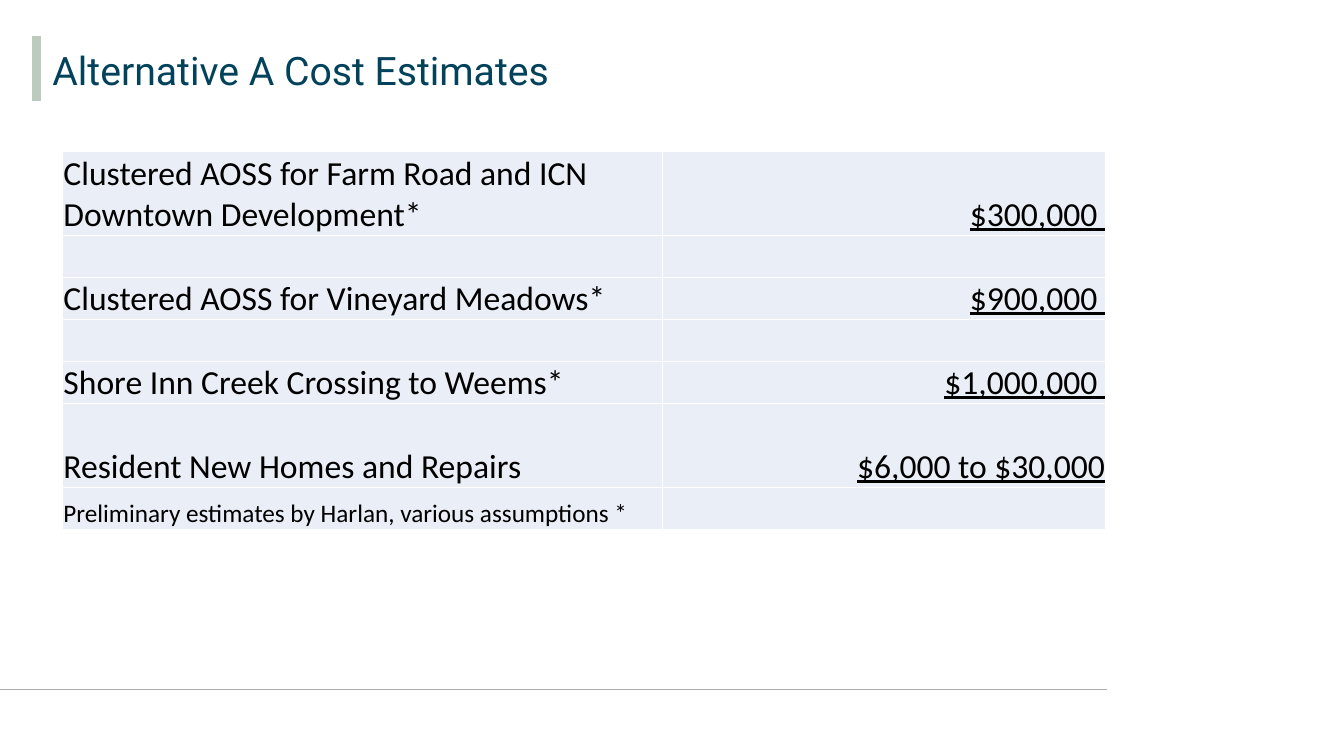
from dataclasses import dataclass

from pptx import Presentation
from pptx.dml.color import RGBColor
from pptx.enum.shapes import MSO_CONNECTOR
from pptx.enum.text import MSO_ANCHOR, MSO_AUTO_SIZE, PP_ALIGN
from pptx.oxml.ns import qn
from pptx.util import Inches, Pt
from lxml.etree import SubElement

SLIDE_WIDTH, SLIDE_HEIGHT = Inches(13.33), Inches(7.5)


@dataclass(frozen=True)
class Theme:
    title_font: str = "Roboto"
    body_font: str = "Calibri"
    title_size: float = 28
    body_size: float = 24
    note_size: float = 18
    border_width: float = 1
    title: str = "03425B"
    text: str = "000000"
    cell: str = "EAEFF7"
    border: str = "FFFFFF"
    accent: str = "BBCBBE"
    rule: str = "AFABAB"


@dataclass(frozen=True)
class Line:
    """A straight line; positions are percentages of the slide."""
    start: tuple[float, float]
    end: tuple[float, float]
    color: str
    weight: float


@dataclass(frozen=True)
class CostRow:
    item: str = ""
    cost: str = ""
    lines: int = 1
    size: float = Theme.body_size


THEME = Theme()
LINES = [
    Line((2.7, 4.8), (2.7, 13.33), THEME.accent, 6.75),
    Line((82.37, 91.2), (0, 91.2), THEME.rule, 1.25),
]
COLUMN_SHARES = [44.64, 33.01]
LINE_SHARE = 5.56
COST_ROWS = [
    CostRow("Clustered AOSS for Farm Road and ICN Downtown Development*", "$300,000 ", lines=2),
    CostRow(),
    CostRow("Clustered AOSS for Vineyard Meadows*", "$900,000 "),
    CostRow(),
    CostRow("Shore Inn Creek Crossing to Weems*", "$1,000,000 "),
    CostRow("Resident New Homes and Repairs", "$6,000 to $30,000", lines=2),
    CostRow("Preliminary estimates by Harlan, various assumptions *", size=THEME.note_size),
]


def across(percent: float) -> int:
    return round(SLIDE_WIDTH * percent / 100)


def down(percent: float) -> int:
    return round(SLIDE_HEIGHT * percent / 100)


def draw_line(page, line: Line) -> None:
    connector = page.shapes.add_connector(
        MSO_CONNECTOR.STRAIGHT,
        across(line.start[0]), down(line.start[1]),
        across(line.end[0]), down(line.end[1]))
    connector.line.color.rgb = RGBColor.from_string(line.color)
    connector.line.width = Pt(line.weight)
    SubElement(connector._element.spPr, qn("a:effectLst"))


def style_text(para, font: str, size: float, color: str) -> None:
    for span in para.runs:
        span.font.name = font
        span.font.size = Pt(size)
        span.font.color.rgb = RGBColor.from_string(color)


def draw_title(page, text: str) -> None:
    box = page.shapes.title
    box.left, box.top = across(3.15), down(2.93)
    box.width, box.height = across(94.75), down(13.47)
    frame = box.text_frame
    frame.text = text
    frame.auto_size = MSO_AUTO_SIZE.NONE
    frame.vertical_anchor = MSO_ANCHOR.MIDDLE
    para = frame.paragraphs[0]
    para.alignment = PP_ALIGN.LEFT
    para.line_spacing = 0.9
    style_text(para, THEME.title_font, THEME.title_size, THEME.title)


def add_borders(cell) -> None:
    properties = cell._tc.get_or_add_tcPr()
    for side in ("lnL", "lnR", "lnT", "lnB"):
        edge = SubElement(properties, qn(f"a:{side}"), w=str(Pt(THEME.border_width)))
        fill = SubElement(edge, qn("a:solidFill"))
        SubElement(fill, qn("a:srgbClr"), val=THEME.border)


def fill_cell(cell, text: str, size: float, is_cost: bool) -> None:
    add_borders(cell)
    cell.fill.solid()
    cell.fill.fore_color.rgb = RGBColor.from_string(THEME.cell)
    cell.margin_left = cell.margin_right = cell.margin_top = Inches(0.01)
    cell.margin_bottom = 0
    cell.vertical_anchor = MSO_ANCHOR.BOTTOM
    if not text:
        return
    cell.text_frame.text = text
    para = cell.text_frame.paragraphs[0]
    para.alignment = PP_ALIGN.RIGHT if is_cost else PP_ALIGN.LEFT
    style_text(para, THEME.body_font, size, THEME.text)
    para.runs[0].font.underline = is_cost


def draw_costs(page, rows: list[CostRow]) -> None:
    line_count = sum(row.lines for row in rows)
    table = page.shapes.add_table(
        len(rows), len(COLUMN_SHARES), across(4.65), down(20),
        across(sum(COLUMN_SHARES)), down(LINE_SHARE * line_count)).table
    table.first_row = table.horz_banding = False
    for column, share in zip(table.columns, COLUMN_SHARES):
        column.width = across(share)
    for index, row in enumerate(rows):
        table.rows[index].height = down(LINE_SHARE * row.lines)
        fill_cell(table.cell(index, 0), row.item, row.size, is_cost=False)
        fill_cell(table.cell(index, 1), row.cost, row.size, is_cost=True)


def main() -> None:
    deck = Presentation()
    deck.slide_width, deck.slide_height = SLIDE_WIDTH, SLIDE_HEIGHT
    page = deck.slides.add_slide(deck.slide_layouts[5])
    for line in LINES:
        draw_line(page, line)
    draw_title(page, "Alternative A Cost Estimates")
    draw_costs(page, COST_ROWS)
    deck.save("out.pptx")


if __name__ == "__main__":
    main()
